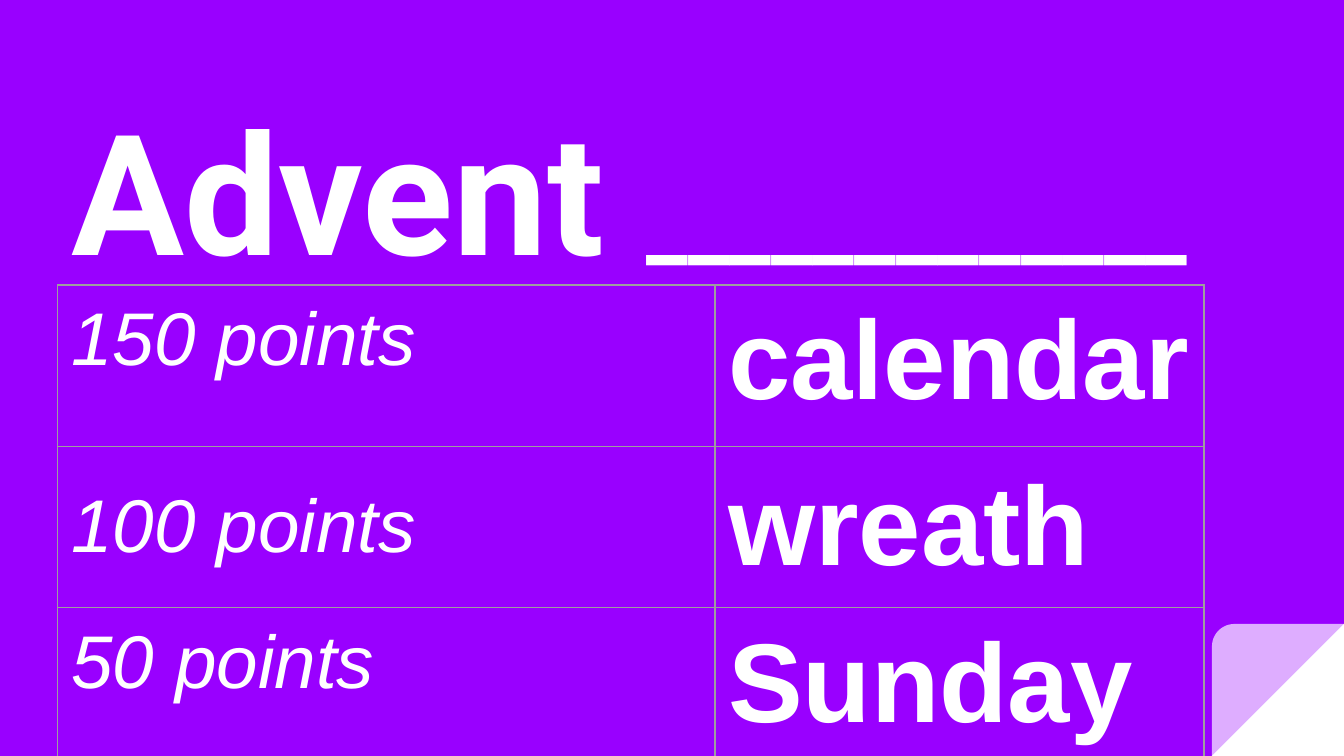
import pptx
import pptx.util
import pptx.oxml
import pptx.oxml.ns
import pptx.dml.color
import pptx.enum.shapes
import pptx.enum.text

Pt = pptx.util.Pt
Anchor = pptx.enum.text.MSO_ANCHOR
Shape = pptx.enum.shapes.MSO_SHAPE

COLORS = {"background": "9900FF", "text": "FFFFFF", "corner": "FFFFFF", "border": "9E9E9E"}
QUESTION = [("Advent ", 90), ("_____________", 50)]
ANSWERS = [
    ("150 points", "calendar", Anchor.TOP),
    ("100 points", "wreath", Anchor.MIDDLE),
    ("50 points", "Sunday", Anchor.TOP),
]
SLIDE_W, SLIDE_H = 720, 405
LEFT, INSET = 31, 7.2
QUESTION_TOP, QUESTION_W, QUESTION_H = 36, 647, 126
BOARD_TOP, ROW_H = 152.7, 77
COLUMN_WIDTHS = [352, 262]
CORNER = 70.7


def rgb(name):
    return pptx.dml.color.RGBColor.from_string(COLORS[name])


def style(run, font_name, size, bold=False, italic=False):
    run.font.name = font_name
    run.font.size = Pt(size)
    run.font.bold = bold
    run.font.italic = italic
    run.font.color.rgb = rgb("text")


def add_corner(slide, kind):
    corner = slide.shapes.add_shape(
        kind, Pt(SLIDE_W - CORNER), Pt(SLIDE_H - CORNER), Pt(CORNER), Pt(CORNER))
    corner.shadow.inherit = False
    corner.fill.solid()
    corner.fill.fore_color.rgb = rgb("corner")
    corner.line.fill.background()
    corner._element.spPr.find(pptx.oxml.ns.qn("a:xfrm")).set("flipH", "1")
    return corner


def set_borders(cell):
    properties = cell._tc.get_or_add_tcPr()
    for position, side in enumerate(("lnL", "lnR", "lnT", "lnB")):
        border = pptx.oxml.parse_xml(
            f'<a:{side} {pptx.oxml.ns.nsdecls("a")} w="{Pt(0.75)}"><a:solidFill>'
            f'<a:srgbClr val="{COLORS["border"]}"/></a:solidFill></a:{side}>')
        properties.insert(position, border)


def add_question(slide):
    question = slide.shapes.add_textbox(
        Pt(LEFT), Pt(QUESTION_TOP), Pt(QUESTION_W), Pt(QUESTION_H))
    frame = question.text_frame
    frame.word_wrap = True
    frame.vertical_anchor = Anchor.BOTTOM
    frame.margin_left = frame.margin_right = Pt(INSET)
    frame.margin_top = frame.margin_bottom = Pt(INSET)
    for text, size in QUESTION:
        run = frame.paragraphs[0].add_run()
        run.text = text
        style(run, "Roboto", size, bold=True)


def add_board(slide):
    board = slide.shapes.add_table(
        len(ANSWERS), len(COLUMN_WIDTHS), Pt(LEFT), Pt(BOARD_TOP),
        Pt(sum(COLUMN_WIDTHS)), Pt(ROW_H * len(ANSWERS))).table
    board.first_row = board.horz_banding = False
    for column, width in zip(board.columns, COLUMN_WIDTHS):
        column.width = Pt(width)
    for row, (points, answer, anchor) in zip(board.rows, ANSWERS):
        row.height = Pt(ROW_H)
        for cell, text, size, bold in zip(row.cells, (points, answer), (40, 60), (False, True)):
            cell.text_frame.text = text
            style(cell.text_frame.paragraphs[0].runs[0], "Arial", size, bold, not bold)
            cell.vertical_anchor = anchor
            cell.margin_left = cell.margin_right = Pt(INSET)
            cell.margin_top = cell.margin_bottom = Pt(INSET)
            cell.fill.background()
            set_borders(cell)


def main():
    deck = pptx.Presentation()
    deck.slide_width, deck.slide_height = Pt(SLIDE_W), Pt(SLIDE_H)
    slide = deck.slides.add_slide(deck.slide_layouts[6])
    slide.background.fill.solid()
    slide.background.fill.fore_color.rgb = rgb("background")

    add_corner(slide, Shape.RIGHT_TRIANGLE)
    fold = add_corner(slide, Shape.ROUND_1_RECTANGLE)
    fold.adjustments[0] = 0.17
    fold_color = fold._element.spPr.find(".//" + pptx.oxml.ns.qn("a:srgbClr"))
    fold_color.append(pptx.oxml.parse_xml(
        f'<a:alpha {pptx.oxml.ns.nsdecls("a")} val="68000"/>'))

    add_question(slide)
    add_board(slide)
    deck.save("out.pptx")


if __name__ == "__main__":
    main()
